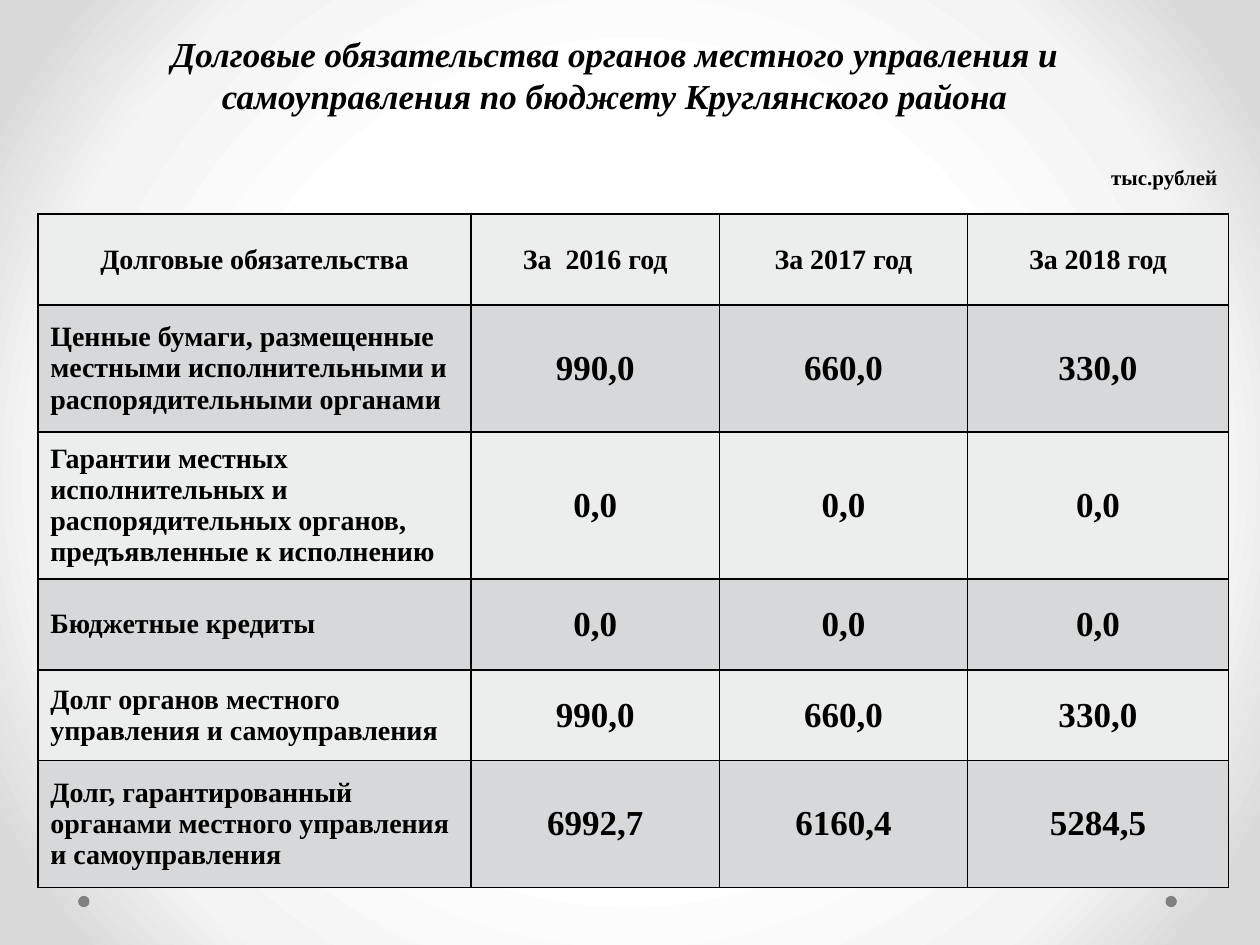
from dataclasses import dataclass

from pptx import Presentation
from pptx.dml.color import RGBColor
from pptx.enum.shapes import MSO_SHAPE
from pptx.enum.text import MSO_ANCHOR, PP_ALIGN
from pptx.oxml import parse_xml
from pptx.oxml.ns import nsdecls, qn
from pptx.util import Inches, Pt


@dataclass(frozen=True)
class Theme:
    font: str = "Times New Roman"
    ink: str = "000000"
    dot: str = "808080"
    bands: tuple = ("ECEDED", "D6D8D9")
    backdrop: tuple = ((50, "FFFFFF"), (76, "F4F4F4"), (92, "DADADA"))
    title: int = 20
    value: int = 20
    label: int = 16
    unit: int = 12
    border: int = 1


T = Theme()

COLS = (3.44, 1.97, 1.97, 2.07)
ROWS = (0.72, 1.01, 1.01, 0.72, 0.72, 1.01)
DEBTS = (
    ("Долговые обязательства", "За  2016 год", "За 2017 год", "За 2018 год"),
    ("Ценные бумаги, размещенные местными исполнительными и распорядительными органами",
     "990,0", "660,0", "330,0"),
    ("Гарантии местных исполнительных и распорядительных органов, предъявленные к исполнению",
     "0,0", "0,0", "0,0"),
    ("Бюджетные кредиты", "0,0", "0,0", "0,0"),
    ("Долг органов местного управления и самоуправления", "990,0", "660,0", "330,0"),
    ("Долг, гарантированный органами местного управления и самоуправления",
     "6992,7", "6160,4", "5284,5"),
)


def write(tf, text, size, align, italic=False):
    p = tf.paragraphs[0]
    p.text = text
    p.alignment = align
    p.font.name = T.font
    p.font.size = Pt(size)
    p.font.bold = True
    p.font.italic = italic
    p.font.color.rgb = RGBColor.from_string(T.ink)


def add_backdrop(s):
    """Radial gradient from the centre, which python-pptx cannot set directly."""
    s.background.fill.gradient()
    linear = s._element.find(".//" + qn("a:gradFill"))
    stops = "".join(
        f'<a:gs pos="{pos * 1000}"><a:srgbClr val="{color}"/></a:gs>'
        for pos, color in T.backdrop)
    radial = parse_xml(
        f'<a:gradFill {nsdecls("a")} rotWithShape="1"><a:gsLst>{stops}</a:gsLst>'
        '<a:path path="circle"><a:fillToRect l="50000" t="50000" r="50000" b="50000"/>'
        '</a:path></a:gradFill>')
    linear.getparent().replace(linear, radial)


def add_dots(s, lefts, top, size):
    for left in lefts:
        sp = s.shapes.add_shape(MSO_SHAPE.OVAL, Inches(left), Inches(top),
                                Inches(size), Inches(size))
        sp.shadow.inherit = False
        sp.fill.solid()
        sp.fill.fore_color.rgb = RGBColor.from_string(T.dot)
        sp.line.fill.background()


def add_text(s, box, text, size, align, italic=False, wrap=True):
    tf = s.shapes.add_textbox(*map(Inches, box)).text_frame
    tf.word_wrap = wrap
    write(tf, text, size, align, italic)


def set_borders(cell):
    tcPr = cell._tc.get_or_add_tcPr()
    for i, side in enumerate(("lnL", "lnR", "lnT", "lnB")):
        tcPr.insert(i, parse_xml(
            f'<a:{side} {nsdecls("a")} w="{Pt(T.border)}"><a:solidFill>'
            f'<a:srgbClr val="{T.ink}"/></a:solidFill></a:{side}>'))


def add_debt_table(s, left, top):
    table = s.shapes.add_table(
        len(ROWS), len(COLS), Inches(left), Inches(top),
        Inches(sum(COLS)), Inches(sum(ROWS))).table
    for column, width in zip(table.columns, COLS):
        column.width = Inches(width)
    for i, (row, height, texts) in enumerate(zip(table.rows, ROWS, DEBTS)):
        row.height = Inches(height)
        for j, (cell, text) in enumerate(zip(row.cells, texts)):
            is_label = j == 0 and i > 0
            is_value = j > 0 and i > 0
            write(cell.text_frame, text, T.value if is_value else T.label,
                  PP_ALIGN.LEFT if is_label else PP_ALIGN.CENTER)
            cell.vertical_anchor = MSO_ANCHOR.MIDDLE
            cell.fill.solid()
            cell.fill.fore_color.rgb = RGBColor.from_string(T.bands[i % 2])
            set_borders(cell)


def main():
    prs = Presentation()
    prs.slide_width, prs.slide_height = Inches(10), Inches(7.5)
    s = prs.slides.add_slide(prs.slide_layouts[6])

    # Background and its two dots
    add_backdrop(s)
    add_dots(s, lefts=(9.25, 0.62), top=7.11, size=0.09)

    # Title
    add_text(s, (0.51, 0.21, 8.74, 0.77),
             "Долговые обязательства органов местного управления и "
             "самоуправления по бюджету Круглянского района",
             T.title, PP_ALIGN.CENTER, italic=True)

    # Table with its unit of measure
    add_debt_table(s, 0.3, 1.7)
    add_text(s, (8.71, 1.26, 1.05, 0.3), "тыс.рублей", T.unit, PP_ALIGN.RIGHT, wrap=False)

    prs.save("out.pptx")


if __name__ == "__main__":
    main()
